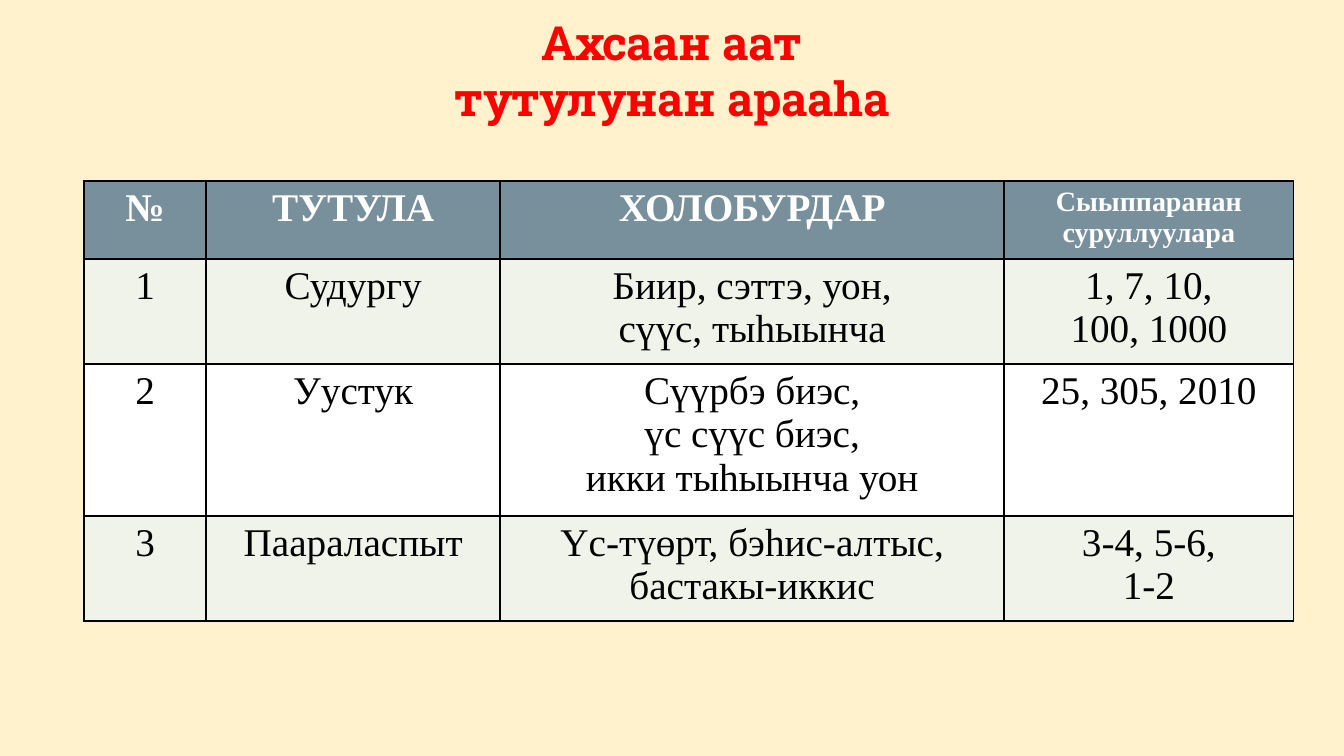
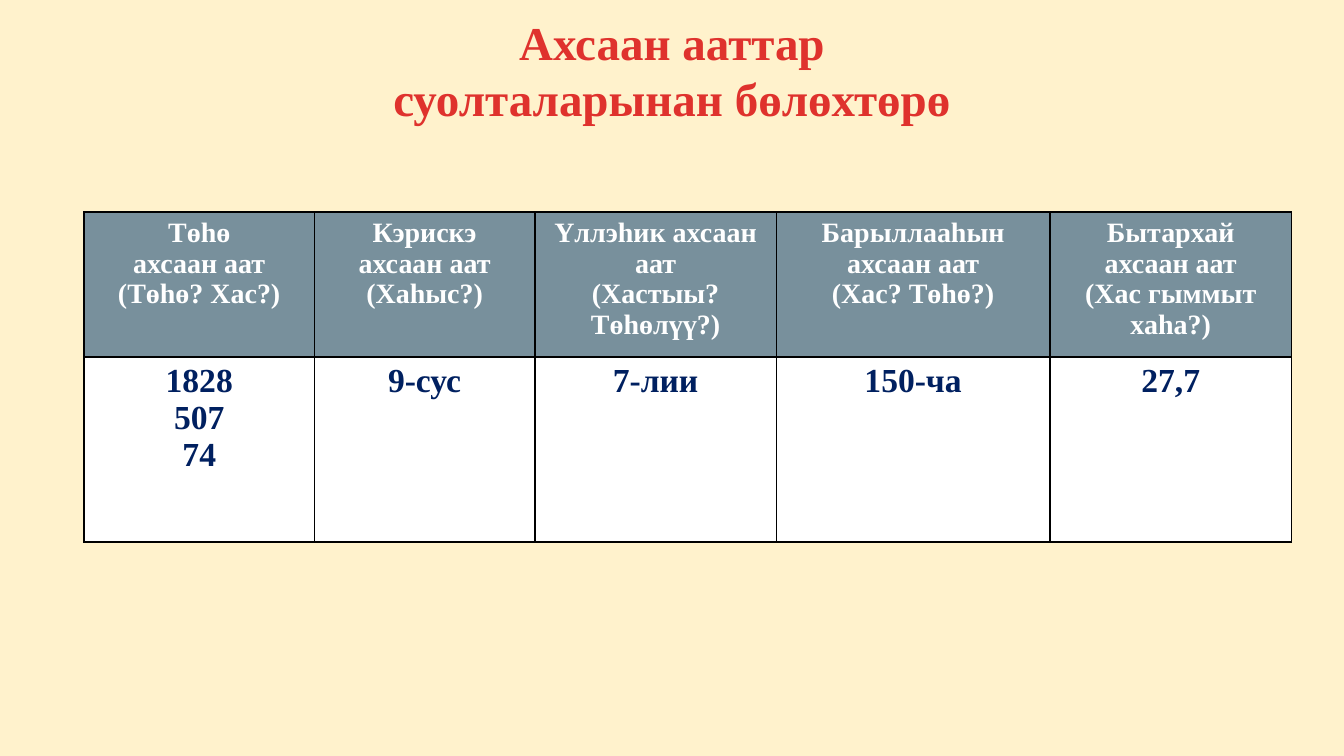
from dataclasses import dataclass

from lxml.etree import SubElement
from pptx import Presentation
from pptx.dml.color import RGBColor
from pptx.enum.text import MSO_ANCHOR, PP_ALIGN
from pptx.oxml.ns import qn
from pptx.util import Pt


@dataclass(frozen=True)
class Theme:
    background: str = "FFF2CC"
    header: str = "78909C"
    band: str = "EFF3E9"
    white: str = "FFFFFF"
    black: str = "000000"
    navy: str = "002060"
    red: str = "FF0000"
    brick: str = "DF322D"
    serif: str = "Times New Roman"
    slab: str = "Roboto Slab"
    title: float = 25.2
    large: float = 21
    medium: float = 18
    small: float = 15


T = Theme()


def style(p, font, size, color, bold):
    p.alignment = PP_ALIGN.CENTER
    p.font.name, p.font.size, p.font.bold = font, Pt(size), bold
    p.font.color.rgb = RGBColor.from_string(color)


def add_borders(cell):
    tcPr = cell._tc.get_or_add_tcPr()
    for side in ("lnL", "lnR", "lnT", "lnB"):
        ln = SubElement(tcPr, qn(f"a:{side}"), w=str(Pt(1)))
        fill = SubElement(ln, qn("a:solidFill"))
        SubElement(fill, qn("a:srgbClr"), val=T.black)


# Slide content: in cells, each line is a paragraph
slides = [
    dict(
        title="Ахсаан аат\vтутулунан арааhа", title_font=T.slab, title_color=T.red,
        top=97, margin=6.5,
        columns=[65.5, 157.5, 270, 155], heights=[38.5, 52, 75.5, 52],
        header_sizes=[T.large, T.large, T.large, T.small],
        body=(T.serif, T.large, T.black, False), fills=[T.band, T.white],
        rows=[
            ["№", "ТУТУЛА", "ХОЛОБУРДАР", "Сыыппаранан\nсуруллуулара"],
            ["1", "Судургу", "Биир, сэттэ, уон,\nсүүс, тыhыынча", "1, 7, 10,\n100, 1000"],
            ["2", "Уустук", "Сүүрбэ биэс,\nүс сүүс биэс,\nикки тыhыынча уон",
             "25, 305, 2010"],
            ["3", "Паараласпыт", "Үс-түөрт, бэhис-алтыс, бастакы-иккис", "3-4, 5-6,\n1-2"],
        ],
    ),
    dict(
        title="Ахсаан ааттар\vсуолталарынан бөлөхтөрө", title_font=T.serif,
        title_color=T.brick, top=113.5, margin=7.2,
        columns=[123.5, 118, 129.5, 146.5, 129.5], heights=[76, 99],
        header_sizes=[T.small] * 5,
        body=(T.serif, T.medium, T.navy, True), fills=[T.white],
        rows=[
            ["Төhө\nахсаан аат\n(Төhө? Хас?)", "Кэрискэ ахсаан аат\n(Хаhыс?)",
             "Үллэhик ахсаан аат\n(Хастыы? Төһөлүү?)",
             "Барыллааhын ахсаан аат\n(Хас? Төһө?)",
             "Бытархай ахсаан аат\n(Хас гыммыт хаhа?)"],
            ["1828\n507\n74", "9-сус", "7-лии", "150-ча", "27,7"],
        ],
    ),
]

prs = Presentation()
prs.slide_width, prs.slide_height = Pt(720), Pt(405)

for data in slides:
    s = prs.slides.add_slide(prs.slide_layouts[6])
    s.background.fill.solid()
    s.background.fill.fore_color.rgb = RGBColor.from_string(T.background)

    # Title
    sp = s.shapes.add_textbox(Pt(36), Pt(12.5), Pt(648), Pt(50))
    tf = sp.text_frame
    tf.word_wrap = True
    tf.vertical_anchor = MSO_ANCHOR.MIDDLE
    p = tf.paragraphs[0]
    p.text = data["title"]
    p.line_spacing = Pt(30)
    style(p, data["title_font"], T.title, data["title_color"], True)

    # Table grid
    columns, heights, rows = data["columns"], data["heights"], data["rows"]
    table = s.shapes.add_table(len(rows), len(columns), Pt(45), Pt(data["top"]),
                               Pt(sum(columns)), Pt(sum(heights))).table
    for column, width in zip(table.columns, columns):
        column.width = Pt(width)
    for row, height in zip(table.rows, heights):
        row.height = Pt(height)

    # Cells: header row, then body rows in alternating fills
    for i, texts in enumerate(rows):
        for j, text in enumerate(texts):
            cell = table.cell(i, j)
            cell.text = text
            cell.margin_left = cell.margin_right = Pt(data["margin"])
            cell.margin_top = cell.margin_bottom = Pt(2.9)
            add_borders(cell)
            if i == 0:
                fill = T.header
                look = (T.serif, data["header_sizes"][j], T.white, True)
            else:
                fill = data["fills"][(i - 1) % len(data["fills"])]
                look = data["body"]
            cell.fill.solid()
            cell.fill.fore_color.rgb = RGBColor.from_string(fill)
            for p in cell.text_frame.paragraphs:
                style(p, *look)

prs.save("out.pptx")
